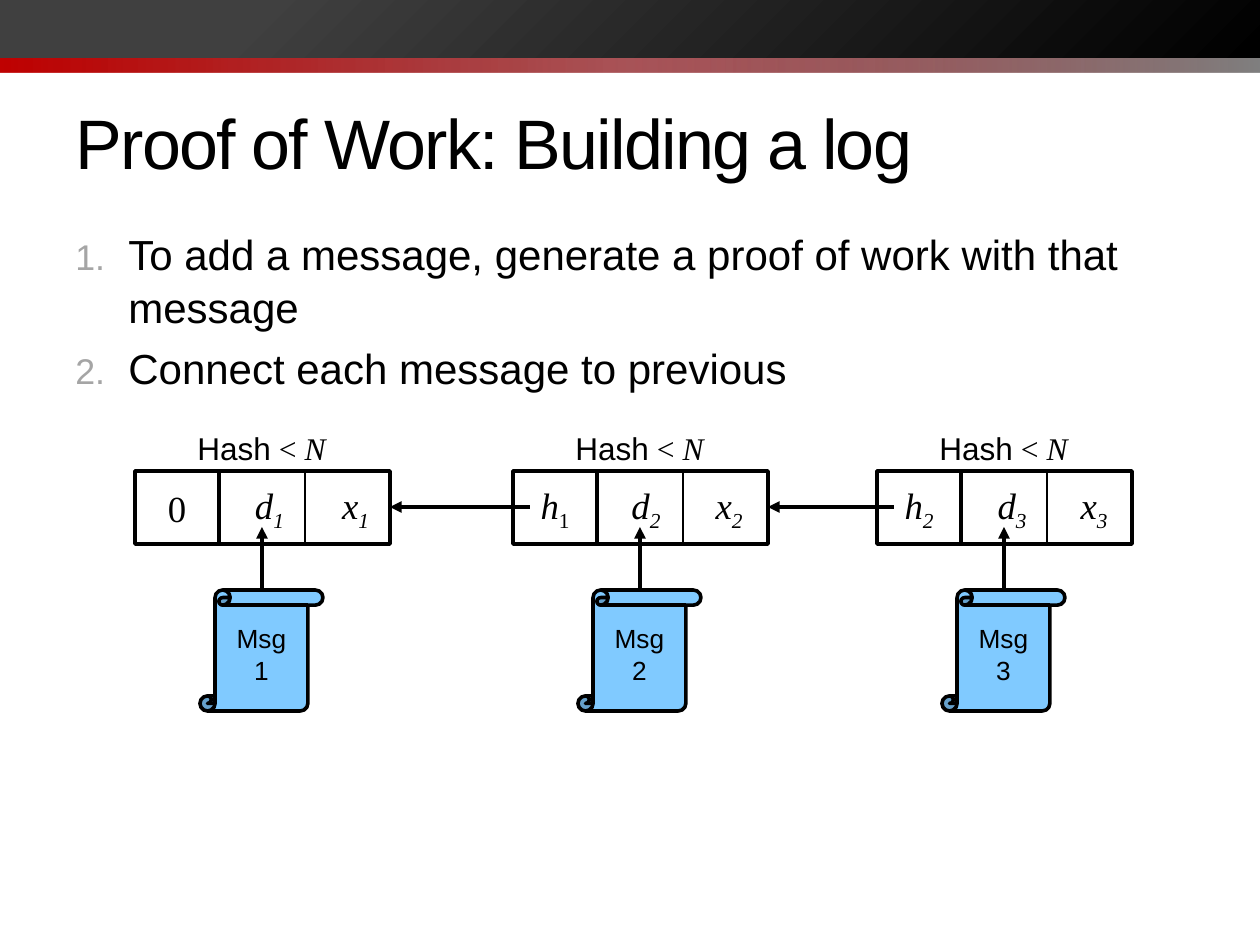
"""Build the slide on growing a log from linked proofs of work."""
from dataclasses import dataclass

from lxml import etree
from pptx import Presentation
from pptx.dml.color import RGBColor
from pptx.enum.shapes import MSO_CONNECTOR, MSO_SHAPE
from pptx.enum.text import MSO_ANCHOR, PP_ALIGN
from pptx.oxml import parse_xml
from pptx.oxml.ns import nsdecls, qn
from pptx.util import Emu, Pt

RECT = MSO_SHAPE.RECTANGLE
SCROLL = MSO_SHAPE.VERTICAL_SCROLL
STRAIGHT = MSO_CONNECTOR.STRAIGHT
MIDDLE = MSO_ANCHOR.MIDDLE
TOP = MSO_ANCHOR.TOP
LEFT = PP_ALIGN.LEFT
CENTER = PP_ALIGN.CENTER
PX = 914400 / 126


@dataclass(frozen=True)
class Theme:
    ink: RGBColor = RGBColor(0, 0, 0)
    paper: RGBColor = RGBColor(0xFF, 0xFF, 0xFF)
    message: RGBColor = RGBColor(0x80, 0xCA, 0xFF)
    number: str = "A5A5A5"
    sans: str = "Arial"
    serif: str = "Times New Roman"
    title: int = 40
    body: int = 24
    symbol: int = 21
    label: int = 18
    note: int = 15
    outline: float = 2.08
    arrow: float = 2.25
    divider: int = 1


T = Theme()


def add_box(kind, bounds, runs=(), fill=None, anchor=MIDDLE, wrap=True):
    x, y, w, h = [Emu(round(v * PX)) for v in bounds]
    if kind is None:
        sp = s.shapes.add_textbox(x, y, w, h)
    else:
        sp = s.shapes.add_shape(kind, x, y, w, h)
        sp.shadow.inherit = False
        sp.line.color.rgb = T.ink
        sp.line.width = Pt(T.outline)
    if fill is not None:
        sp.fill.solid()
        sp.fill.fore_color.rgb = fill
    tf = sp.text_frame
    tf.word_wrap = wrap
    tf.vertical_anchor = anchor
    p = tf.paragraphs[0]
    p.alignment = CENTER
    for text, font, size, italic, sub in runs:
        r = p.add_run()
        r.text = text
        r.font.name = font
        r.font.size = Pt(size)
        r.font.italic = italic
        r.font.color.rgb = T.ink
        if sub:
            r.font._element.set("baseline", "-25000")
    return sp


def add_line(x1, y1, x2, y2, width, arrow=True):
    ends = [Emu(round(v * PX)) for v in (x1, y1, x2, y2)]
    cn = s.shapes.add_connector(STRAIGHT, *ends)
    cn.line.color.rgb = T.ink
    cn.line.width = Pt(width)
    if arrow:
        etree.SubElement(cn.line._get_or_add_ln(), qn("a:tailEnd"), type="triangle")
    etree.SubElement(cn._element.spPr, qn("a:effectLst"))


prs = Presentation()
prs.slide_width = Emu(round(1260 * PX))
prs.slide_height = Emu(round(945 * PX))
s = prs.slides.add_slide(prs.slide_layouts[5])

BARS = [
    ((0, 30, 1260, 43), 0, [(0, "C00000", 100), (50, "7F0007", 67), (100, "808080", 100)]),
    ((0, 0, 1260, 58), 225, [(0, "000000", 100), (80, "404040", 100), (100, "404040", 100)]),
]
for bounds, angle, stops in BARS:
    sp = add_box(RECT, bounds)
    sp.line.fill.background()
    sp.fill.background()
    gs = "".join(
        f'<a:gs pos="{pos * 1000}"><a:srgbClr val="{color}">'
        f'<a:alpha val="{alpha * 1000}"/></a:srgbClr></a:gs>'
        for pos, color, alpha in stops
    )
    spPr = sp._element.spPr
    spPr.replace(spPr.find(qn("a:noFill")), parse_xml(
        f'<a:gradFill {nsdecls("a")} rotWithShape="1"><a:gsLst>{gs}</a:gsLst>'
        f'<a:lin ang="{angle * 60000}" scaled="0"/></a:gradFill>'
    ))

title = s.shapes.title
title.left, title.top, title.width, title.height = [
    Emu(round(v * PX)) for v in (63, 73, 1134, 136)
]
tf = title.text_frame
tf.text = "Proof of Work: Building a log"
tf.vertical_anchor = MIDDLE
p = tf.paragraphs[0]
p.alignment = LEFT
font = p.runs[0].font
font.name, font.size, font.color.rgb = T.sans, Pt(T.title), T.ink
font._element.set("spc", "-100")

STEPS = [
    "To add a message, generate a proof of work with that message",
    "Connect each message to previous",
]
tf = add_box(None, (63, 220, 1134, 672), anchor=TOP).text_frame
tf.text = "\n".join(STEPS)
for p in tf.paragraphs:
    p.alignment = LEFT
    p.line_spacing = 1.05
    p.space_before = Pt(4.8)
    font = p.runs[0].font
    font.name, font.size, font.color.rgb = T.sans, Pt(T.body), T.ink
    pPr = p._p.get_or_add_pPr()
    indent = round(53 * PX)
    pPr.set("marL", str(indent))
    pPr.set("indent", str(-indent))
    color = etree.SubElement(pPr, qn("a:buClr"))
    etree.SubElement(color, qn("a:srgbClr"), val=T.number)
    etree.SubElement(pPr, qn("a:buSzPct"), val="85000")
    etree.SubElement(pPr, qn("a:buFont"), typeface=T.sans)
    etree.SubElement(pPr, qn("a:buAutoNum"), type="arabicPeriod")

ROW_Y, ROW_H, CELL_W, BLOCK_W = 471, 73, 84, 171
MID_Y = ROW_Y + ROW_H // 2
SCROLL_Y = 590
HASH_LABEL = [
    ("Hash", T.sans, T.label, False, False),
    (" < ", T.serif, T.label, False, False),
    ("N", T.serif, T.label, True, False),
]
BLOCKS = [
    (219, (12, 77), (102, 69)),
    (597, (18, 62), (102, 60)),
    (961, (17, 68), (102, 62)),
]
previous_end = None
for i, (x, data, nonce) in enumerate(BLOCKS, 1):
    add_box(RECT, (x, ROW_Y, BLOCK_W, ROW_H), fill=T.paper)
    note = [(f"Msg {i}", T.sans, T.note, False, False)]
    add_box(SCROLL, (x - 19, SCROLL_Y, 123, 121), note, T.message)
    add_line(x + 86, ROW_Y, x + 86, ROW_Y + ROW_H, T.divider, arrow=False)
    for letter, (dx, w) in (("d", data), ("x", nonce)):
        symbol = [
            (letter, T.serif, T.symbol, True, False),
            (str(i), T.serif, T.symbol, True, True),
        ]
        add_box(None, (x + dx, 479, w, 57), symbol)
    add_line(x + 43, SCROLL_Y, x + 43, 527, T.arrow)
    add_box(None, (x - 35, 423, 155, 50), HASH_LABEL, anchor=TOP, wrap=False)

    link = [("0", T.serif, T.symbol, False, False)]
    if previous_end is not None:
        link = [
            ("h", T.serif, T.symbol, True, False),
            (str(i - 1), T.serif, T.symbol, i > 2, True),
        ]
    add_box(RECT, (x - CELL_W, ROW_Y, CELL_W, ROW_H), link, T.paper)
    if previous_end is not None:
        add_line(x - CELL_W + 17, MID_Y, previous_end, MID_Y, T.arrow)
    previous_end = x + BLOCK_W

prs.save("out.pptx")
